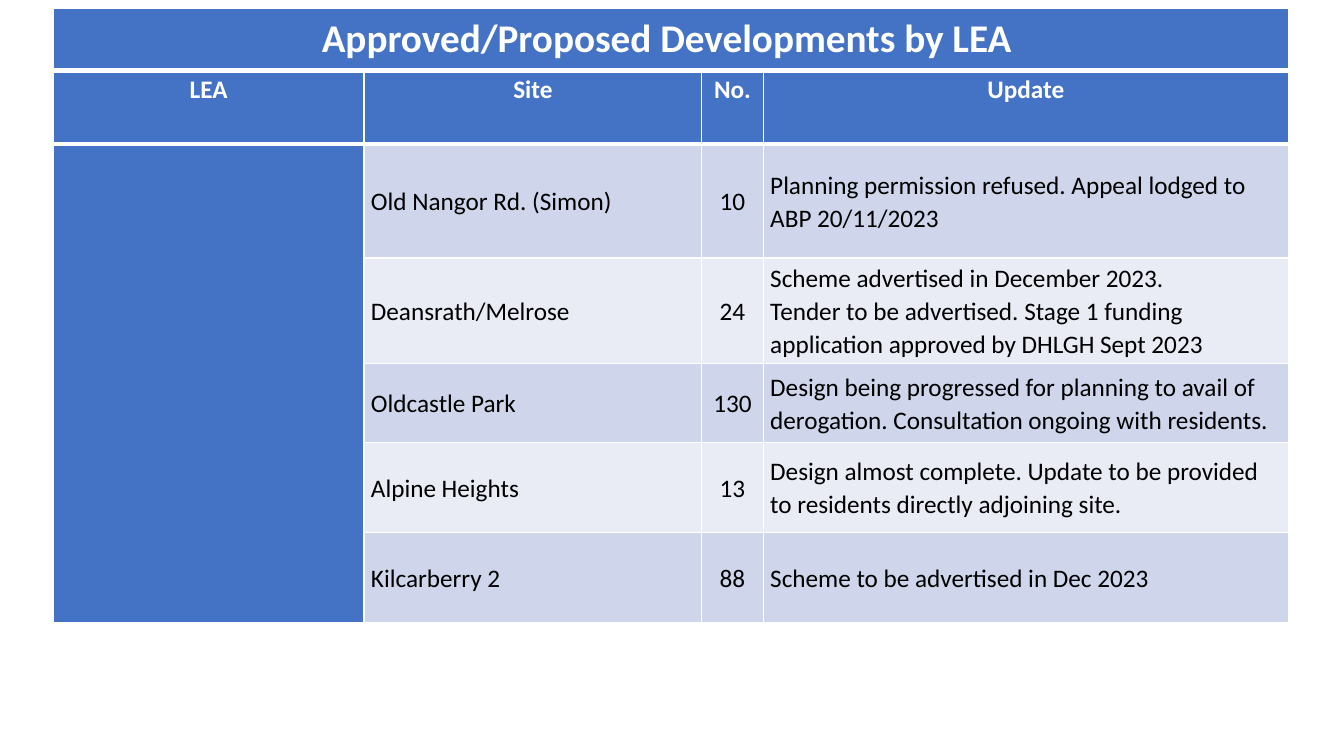
from pptx import Presentation, util as u
from pptx.dml.color import RGBColor
from pptx.enum import text
from pptx.oxml import parse_xml
from pptx.oxml.ns import nsdecls

C = {"blue": "4472C4", "band": "CFD5EA", "pale": "E9EBF5",
     "white": "FFFFFF", "black": "000000"}
FONT = "Calibri"
LEFT = 0.53
COLS = [3.08, 3.35, 0.61, 5.21]
ROWS = [0.71, 1.13, 1.05, 0.78, 0.89, 0.9]
TITLE = "Approved/Proposed Developments by LEA "
HEADERS = ["LEA", "Site", "No.", "Update"]
SITES = [
    ("Old Nangor Rd. (Simon)", "10",
     "Planning permission refused. Appeal lodged to ABP 20/11/2023"),
    ("Deansrath/Melrose", "24",
     "Scheme advertised in December 2023.\n"
     "Tender to be advertised. Stage 1 funding application approved by DHLGH Sept 2023"),
    ("Oldcastle Park", "130",
     "Design being progressed for planning to avail of derogation. "
     "Consultation ongoing with residents."),
    ("Alpine Heights", "13",
     "Design almost complete. Update to be provided to residents directly adjoining site."),
    ("Kilcarberry 2", "88", "Scheme to be advertised in Dec 2023"),
]


def add_grid(s, top, cols, rows):
    tbl = s.shapes.add_table(len(rows), len(cols), u.Inches(LEFT), u.Inches(top),
                             u.Inches(sum(cols)), u.Inches(sum(rows))).table
    for col, w in zip(tbl.columns, cols):
        col.width = u.Inches(w)
    for row, h in zip(tbl.rows, rows):
        row.height = u.Inches(h)
    return tbl


def style_cell(cell, fill, top=1, bottom=1, inset=(0.07, 0), middle=True):
    cell.margin_left = cell.margin_right = u.Inches(inset[0])
    cell.margin_top = cell.margin_bottom = u.Inches(inset[1])
    cell.vertical_anchor = text.MSO_ANCHOR.MIDDLE if middle else text.MSO_ANCHOR.TOP
    tcPr = cell._tc.get_or_add_tcPr()
    for side, pt in (("L", 1), ("R", 1), ("T", top), ("B", bottom)):
        tcPr.append(parse_xml(
            f'<a:ln{side} {nsdecls("a")} w="{u.Pt(pt)}"><a:solidFill>'
            f'<a:srgbClr val="{C["white"]}"/></a:solidFill></a:ln{side}>'))
    cell.fill.solid()
    cell.fill.fore_color.rgb = RGBColor.from_string(C[fill])


def write(cell, words, color, size=18, bold=False, center=False, spacing=1.07):
    tf = cell.text_frame
    for i, line in enumerate(words.split("\n")):
        p = tf.add_paragraph() if i else tf.paragraphs[0]
        p.alignment = text.PP_ALIGN.CENTER if center else text.PP_ALIGN.LEFT
        p.line_spacing = spacing
        r = p.add_run()
        r.text = line
        r.font.name, r.font.size, r.font.bold = FONT, u.Pt(size), bold
        r.font.color.rgb = RGBColor.from_string(C[color])


def add_developments(s):
    tbl = add_grid(s, 0.72, COLS, ROWS)
    for c, name in enumerate(HEADERS):
        style_cell(tbl.cell(0, c), "blue", bottom=3, middle=False)
        write(tbl.cell(0, c), name, "white", bold=True, center=True)
    for i, site in enumerate(SITES, 1):
        top = 3 if i == 1 else 1
        style_cell(tbl.cell(i, 0), "blue", top)
        for c, words in enumerate(site, 1):
            style_cell(tbl.cell(i, c), "band" if i % 2 else "pale", top)
            write(tbl.cell(i, c), words, "black", center=c == 2)
    tbl.cell(1, 0).merge(tbl.cell(len(SITES), 0))


def add_title(s):
    cell = add_grid(s, 0.08, [sum(COLS)], [0.6]).cell(0, 0)
    style_cell(cell, "blue", bottom=3, inset=(0.14, 0.07))
    write(cell, TITLE, "white", size=28, bold=True, center=True, spacing=1.0)


def main():
    """Build the slide of developments by local electoral area."""
    prs = Presentation()
    prs.slide_width, prs.slide_height = u.Inches(13.33), u.Inches(7.5)
    s = prs.slides.add_slide(prs.slide_layouts[6])
    add_developments(s)
    add_title(s)
    prs.save("out.pptx")


if __name__ == "__main__":
    main()
